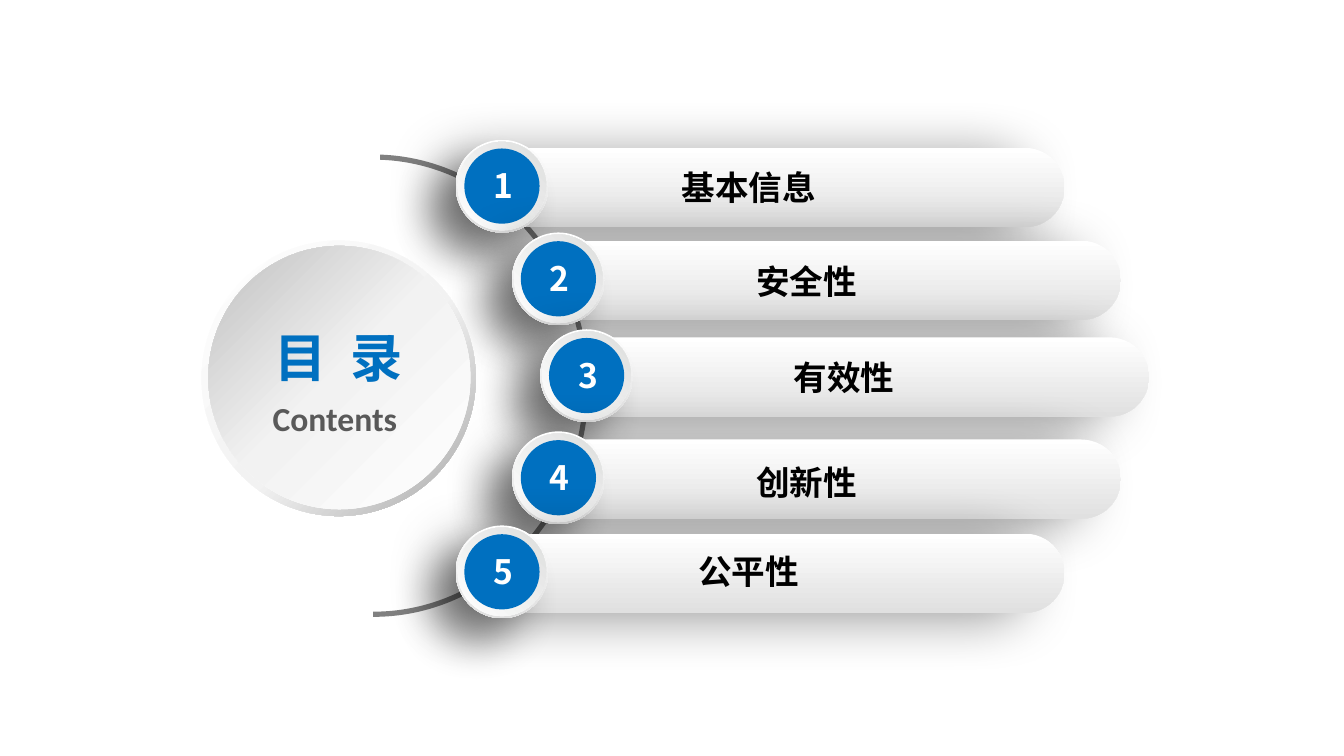
import dataclasses

import pptx
import pptx.dml.color
import pptx.enum.shapes
import pptx.enum.text
import pptx.oxml.ns
import pptx.util
from lxml import etree

Inches, Pt = pptx.util.Inches, pptx.util.Pt
SHAPE = pptx.enum.shapes.MSO_SHAPE
ALIGN = pptx.enum.text.PP_ALIGN
qn = pptx.oxml.ns.qn


@dataclasses.dataclass(frozen=True)
class Theme:
    blue: str = "0070C0"
    arc: str = "808080"
    white: str = "FFFFFF"
    black: str = "000000"
    subtitle: str = "595959"
    title_size: int = 28
    text_size: int = 18
    cjk_font: str = "Noto Sans CJK SC"
    label_font: str = "Arial"
    latin_font: str = "Calibri"
    # Gradients: (position in percent, colour) stops, clockwise angle
    raised: tuple = (((0, "FFFFFF"), (100, "E0E0E0")), 90)
    rim: tuple = (((0, "FFFFFF"), (100, "DDDEDD")), 315)
    ring: tuple = (((0, "FFFFFF"), (55, "F2F2F2"), (100, "A6A6A6")), 45)
    dish: tuple = (((0, "FFFFFF"), (51, "F2F2F2"), (100, "BFBFBF")), 225)
    # Shadows: blur and distance in points, clockwise direction
    bar_shadow: tuple = (30, 20, 171)
    badge_shadow: tuple = (22, 20, 135)
    shadow_opacity: int = 40


THEME = Theme()

# Text, badge left and top, label offset from the badge
ITEMS = [
    ("基本信息", 3.39, 1.04, 0.82, 0.15),
    ("安全性", 3.81, 1.73, 0.83, 0.16),
    ("有效性", 4.02, 2.45, 0.90, 0.16),
    ("创新性", 3.81, 3.21, 0.83, 0.18),
    ("公平性", 3.39, 3.91, 0.82, 0.14),
]


def rgb(color):
    return pptx.dml.color.RGBColor.from_string(color)


def apply_gradient(shape, stops, angle):
    shape.fill.gradient()
    shape.fill.gradient_angle = (360 - angle) % 360
    stop_list = shape.element.spPr.find(qn("a:gradFill")).find(qn("a:gsLst"))
    for stop in list(stop_list):
        stop_list.remove(stop)
    for position, color in stops:
        stop = etree.SubElement(stop_list, qn("a:gs"), pos=str(position * 1000))
        etree.SubElement(stop, qn("a:srgbClr"), val=color)


def apply_shadow(shape, blur, distance, direction):
    effects = shape.element.spPr.find(qn("a:effectLst"))
    shadow = etree.SubElement(
        effects, qn("a:outerShdw"), blurRad=str(Pt(blur)), dist=str(Pt(distance)),
        dir=str(direction * 60000), algn="ctr", rotWithShape="0")
    color = etree.SubElement(shadow, qn("a:srgbClr"), val=THEME.black)
    etree.SubElement(color, qn("a:alpha"), val=str(THEME.shadow_opacity * 1000))


def add_figure(shapes, kind, box, fill, shadow=None):
    """Add a borderless shape; fill is a colour or a gradient of the theme."""
    shape = shapes.add_shape(kind, *map(Inches, box))
    shape.shadow.inherit = False
    shape.line.fill.background()
    if isinstance(fill, str):
        shape.fill.solid()
        shape.fill.fore_color.rgb = rgb(fill)
    else:
        apply_gradient(shape, *fill)
    if shadow:
        apply_shadow(shape, *shadow)
    return shape


def write_text(holder, text, size, font, color, align=ALIGN.CENTER):
    frame = holder.text_frame
    frame_format = {
        "word_wrap": True,
        "auto_size": pptx.enum.text.MSO_AUTO_SIZE.NONE,
        "vertical_anchor": pptx.enum.text.MSO_ANCHOR.TOP,
    }
    for name, value in frame_format.items():
        setattr(frame, name, value)
    para = frame.paragraphs[0]
    para.alignment = align
    span = para.add_run()
    span.text = text
    for name, value in {"size": Pt(size), "name": font, "bold": True}.items():
        setattr(span.font, name, value)
    span.font.color.rgb = rgb(color)
    east_asian = etree.Element(qn("a:ea"), typeface=THEME.cjk_font)
    span.font._element.find(qn("a:latin")).addnext(east_asian)
    return span


def add_label(shapes, box, *text_format):
    return write_text(shapes.add_textbox(*map(Inches, box)), *text_format)


def add_arc(page, box):
    arc = add_figure(page.shapes, SHAPE.BLOCK_ARC, box, THEME.arc)
    arc.rotation = 90
    for index, value in enumerate((108.972, 0.07, 0.012)):
        arc.adjustments[index] = value


def add_item(page, number, text, left, top, label_x, label_y):
    shapes = page.shapes.add_group_shape().shapes
    bar = add_figure(shapes, SHAPE.ROUNDED_RECTANGLE,
                     (left + 0.15, top + 0.06, 4.38, 0.59),
                     THEME.raised, THEME.bar_shadow)
    bar.adjustments[0] = 0.5
    badge_size = 0.69
    for size, fill, shadow in (
        (badge_size, THEME.raised, THEME.badge_shadow),
        (0.66, THEME.rim, None),
        (0.56, THEME.blue, None),
    ):
        inset = (badge_size - size) / 2
        add_figure(shapes, SHAPE.OVAL, (left + inset, top + inset, size, size),
                   fill, shadow)
    add_label(shapes, (left + 0.13, top + 0.14, 0.45, 0.4), str(number),
              THEME.text_size, THEME.cjk_font, THEME.white)
    add_label(shapes, (left + label_x, top + label_y, 2.72, 0.4), text,
              THEME.text_size, THEME.label_font, THEME.black)


def add_title_disc(page, left, top, width, height):
    ring = add_figure(page.shapes, SHAPE.DONUT, (left, top, width, height), THEME.ring)
    ring.adjustments[0] = 0.049
    add_figure(page.shapes, SHAPE.OVAL,
               (left + 0.05, top + 0.04, width - 0.09, height - 0.09), THEME.dish)

    title = page.shapes.title
    title_box = {"left": left + 0.31, "top": top + 0.58, "width": 1.42, "height": 0.57}
    for name, value in title_box.items():
        setattr(title, name, Inches(value))
    span = write_text(title, "目 录", THEME.title_size, THEME.cjk_font, THEME.blue)
    span.font._element.set("spc", "300")
    page.shapes.element.append(title.element)  # in front of the disc

    add_label(page.shapes, (left + 0.43, top + 1.12, 1.18, 0.4), "Contents",
              THEME.text_size, THEME.latin_font, THEME.subtitle, ALIGN.LEFT)


def main():
    deck = pptx.Presentation()
    deck.slide_width = Inches(10)
    deck.slide_height = deck.slide_width * 9 // 16
    page = deck.slides.add_slide(deck.slide_layouts.get_by_name("Title Only"))
    add_arc(page, (1.06, 1.27, 3.44, 3.2))
    for number, item in enumerate(ITEMS, start=1):
        add_item(page, number, *item)
    add_title_disc(page, 1.5, 1.79, 2.04, 2.05)
    deck.save("out.pptx")


if __name__ == "__main__":
    main()
